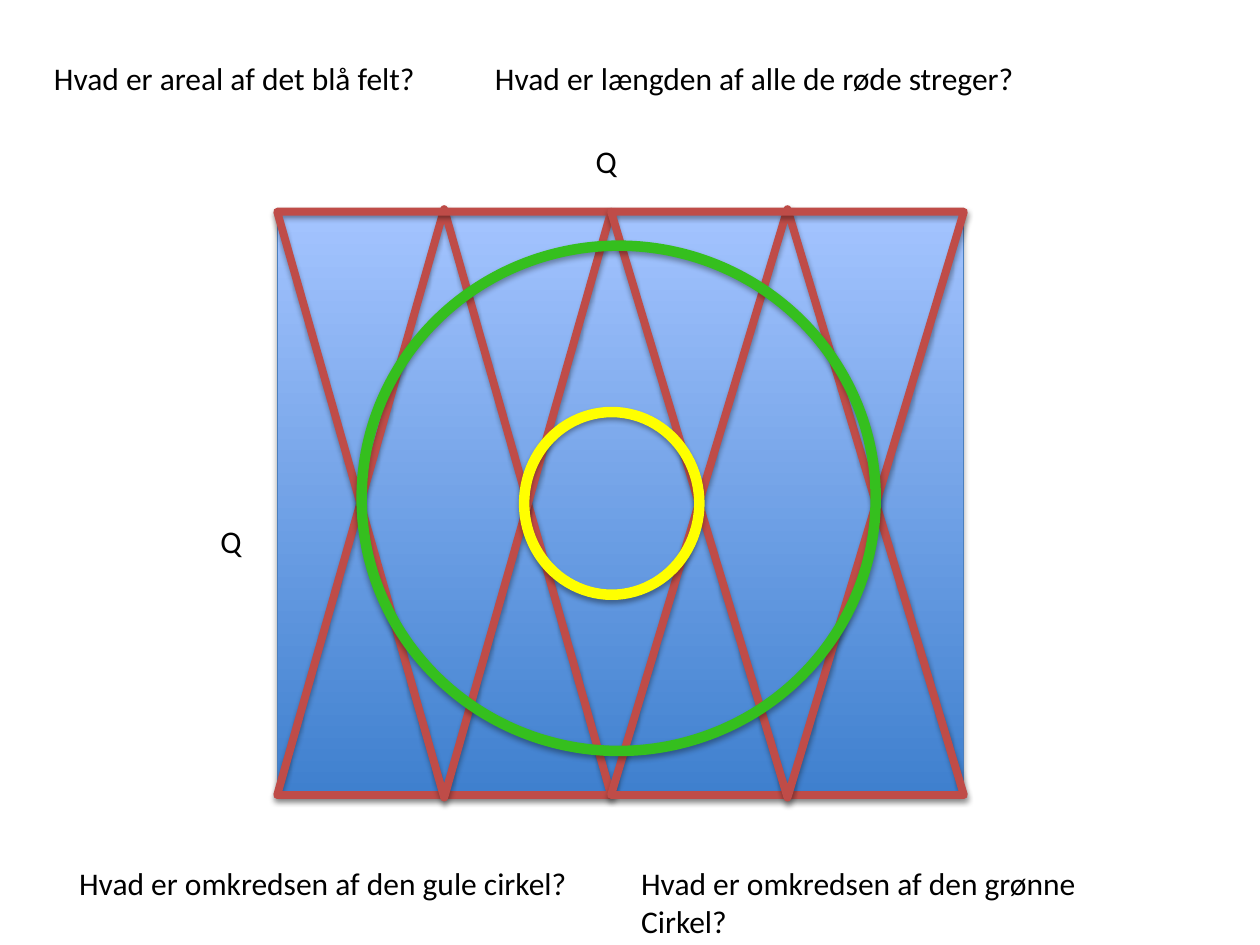
"""Build a geometry puzzle slide with red triangles and two circles in a blue field."""
from lxml import etree
from pptx import Presentation
from pptx.dml.color import RGBColor
from pptx.enum import shapes, text
from pptx.oxml import ns
from pptx.util import Inches, Pt

BLACK = RGBColor(0x00, 0x00, 0x00)
FIELD_DARK = RGBColor(0x3F, 0x80, 0xCE)
FIELD_LIGHT = RGBColor(0xA4, 0xC4, 0xFF)
FIELD_EDGE = RGBColor(0x4B, 0x7E, 0xBC)
RED = RGBColor(0xBF, 0x4C, 0x48)
GREEN = RGBColor(0x35, 0xBF, 0x1E)
YELLOW = RGBColor(0xFF, 0xFF, 0x00)

FIELD_LEFT, FIELD_TOP, FIELD_HEIGHT = 2.2, 1.66, 4.65
TRIANGLE_WIDTHS = (2.65, 2.8)
LABELS = (
    (4.63, 1.08, 0.37, 0.4, "Q"),
    (1.65, 4.09, 0.37, 0.4, "Q"),
    (0.33, 0.42, 3.11, 0.4, "Hvad er areal af det blå felt?"),
    (3.83, 0.42, 4.38, 0.4, "Hvad er længden af alle de røde streger?"),
    (0.53, 6.81, 4.13, 0.4, "Hvad er omkredsen af den gule cirkel?"),
    (4.99, 6.81, 3.7, 0.71, "Hvad er omkredsen af den grønne\nCirkel?"),
)


def add_shadow(figure):
    figure.shadow.inherit = False
    effects = figure._element.spPr.find(ns.qn("a:effectLst"))
    shadow = etree.SubElement(
        effects, ns.qn("a:outerShdw"), blurRad=str(Pt(3.1)),
        dist=str(Pt(1.8)), dir="5400000", rotWithShape="0")
    color = etree.SubElement(shadow, ns.qn("a:srgbClr"), val="000000")
    etree.SubElement(color, ns.qn("a:alpha"), val="35000")


def add_outline(slide, kind, box, color, weight, rotation=0):
    figure = slide.shapes.add_shape(kind, *map(Inches, box))
    figure.rotation = rotation
    figure.fill.background()
    figure.line.color.rgb = color
    figure.line.width = Pt(weight)
    add_shadow(figure)
    return figure


def add_field(slide):
    box = (FIELD_LEFT, FIELD_TOP, sum(TRIANGLE_WIDTHS), FIELD_HEIGHT)
    field = add_outline(slide, shapes.MSO_SHAPE.RECTANGLE, box, FIELD_EDGE, 0.75)
    field.fill.gradient()
    field.fill.gradient_angle = 90
    for stop, color in zip(field.fill.gradient_stops, (FIELD_DARK, FIELD_LIGHT)):
        stop.color.rgb = color


def add_triangles(slide):
    for top, rotation in ((FIELD_TOP, 0), (FIELD_TOP + 0.02, 180)):
        left = FIELD_LEFT
        for width in TRIANGLE_WIDTHS:
            add_outline(slide, shapes.MSO_SHAPE.ISOSCELES_TRIANGLE,
                        (left, top, width, FIELD_HEIGHT), RED, 4.5, rotation)
            left += width


def add_label(slide, left, top, width, height, wording):
    label = slide.shapes.add_textbox(*map(Inches, (left, top, width, height)))
    frame = label.text_frame
    frame.word_wrap = False
    frame.auto_size = text.MSO_AUTO_SIZE.SHAPE_TO_FIT_TEXT
    frame.text = wording
    for paragraph in frame.paragraphs:
        paragraph.font.name = "Calibri"
        paragraph.font.size = Pt(18)
        paragraph.font.color.rgb = BLACK


def main():
    deck = Presentation()
    deck.slide_width, deck.slide_height = Inches(10), Inches(7.5)
    slide = deck.slides.add_slide(deck.slide_layouts[6])
    add_field(slide)
    add_triangles(slide)
    circle = shapes.MSO_SHAPE.OVAL
    add_outline(slide, circle, (2.87, 1.95, 4.08, 4.01), GREEN, 6)
    add_outline(slide, circle, (4.16, 3.27, 1.39, 1.45), YELLOW, 6)
    for label in LABELS:
        add_label(slide, *label)
    deck.save("out.pptx")


if __name__ == "__main__":
    main()
